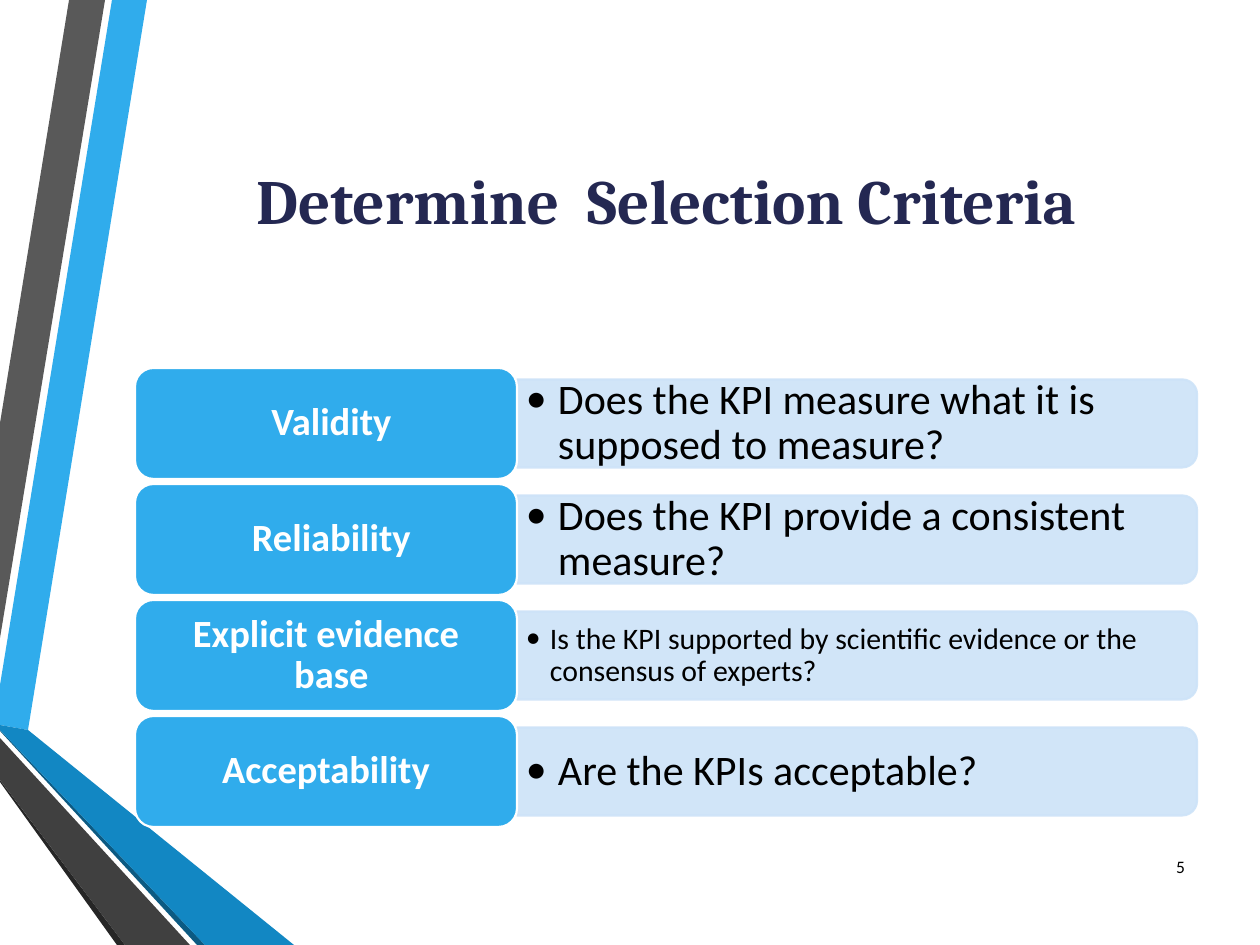
from dataclasses import dataclass

from lxml import etree
from pptx import Presentation
from pptx.dml.color import RGBColor
from pptx.enum.shapes import MSO_SHAPE
from pptx.enum.text import MSO_ANCHOR, PP_ALIGN
from pptx.oxml.ns import qn
from pptx.util import Pt

PX = 914400 / 126
ROUND_RECT = MSO_SHAPE.ROUNDED_RECTANGLE
TOP_ROUNDED = MSO_SHAPE.ROUND_2_SAME_RECTANGLE
MIDDLE = MSO_ANCHOR.MIDDLE
LEFT, CENTER, RIGHT = PP_ALIGN.LEFT, PP_ALIGN.CENTER, PP_ALIGN.RIGHT


@dataclass(frozen=True)
class Theme:
    head_font: str = "Cambria"
    body_font: str = "Calibri"
    navy: str = "242852"
    blue: str = "30ACEC"
    mid_blue: str = "1287C3"
    deep_blue: str = "0C5A82"
    pale: str = "CDE3F8"
    gray: str = "595959"
    dark: str = "404040"
    darkest: str = "262626"
    white: str = "FFFFFF"
    black: str = "000000"
    title_size: int = 36
    label_size: int = 22
    large_size: int = 24
    small_size: int = 17
    number_size: int = 10
    line_width: float = 1.25


T = Theme()

RIBBONS = [
    (T.blue, [(0, 685), (0, 725), (28, 730), (147, 0), (112, 0)]),
    (T.gray, [(105, 0), (69, 0), (0, 423), (0, 638)]),
    (T.darkest, [(0, 780), (0, 782), (117, 945), (125, 945)]),
    (T.deep_blue, [(0, 730), (0, 731), (197, 945), (205, 945)]),
    (T.mid_blue, [(0, 730), (205, 945), (294, 945), (28, 730), (0, 725)]),
    (T.dark, [(0, 780), (125, 945), (190, 945), (0, 738)]),
]
CRITERIA = [
    ("Validity ", "Does the KPI measure what it is supposed to measure?", T.large_size, 32),
    ("Reliability ", "Does the KPI provide a consistent measure?", T.large_size, 32),
    ("Explicit evidence base ",
     "Is the KPI supported by scientific evidence or the consensus of experts?", T.small_size, 24),
    ("Acceptability", "Are the KPIs acceptable?", T.large_size, 32),
]


def emu(px):
    return round(px * PX)


def box(*lengths):
    return [emu(v) for v in lengths]


def paint(sp, fill, line=None):
    sp.shadow.inherit = False
    sp.fill.solid()
    sp.fill.fore_color.rgb = RGBColor.from_string(fill)
    if line:
        sp.line.color.rgb = RGBColor.from_string(line)
        sp.line.width = Pt(T.line_width)
    else:
        sp.line.fill.background()


def set_alpha(sp, percent):
    for clr in sp._element.spPr.iter(qn("a:srgbClr")):
        etree.SubElement(clr, qn("a:alpha")).set("val", str(percent * 1000))


def write(sp, text, size, color, align, font=T.body_font, bold=False, insets=(12, 6)):
    tf = sp.text_frame
    tf.word_wrap = True
    tf.vertical_anchor = MIDDLE
    tf.margin_left = tf.margin_right = emu(insets[0])
    tf.margin_top = tf.margin_bottom = emu(insets[1])
    p = tf.paragraphs[0]
    p.alignment = align
    r = p.add_run()
    r.text = text
    r.font.name = font
    r.font.size = Pt(size)
    r.font.bold = bold
    r.font.color.rgb = RGBColor.from_string(color)
    return p


def add_bullet(p, indent):
    pPr = p._p.get_or_add_pPr()
    pPr.set("marL", str(emu(indent)))
    pPr.set("indent", str(-emu(indent)))
    etree.SubElement(pPr, qn("a:buFont")).set("typeface", T.body_font)
    etree.SubElement(pPr, qn("a:buChar")).set("char", "•")


def add_ribbons(s, x, y):
    for color, points in RIBBONS:
        fb = s.shapes.build_freeform(*points[0], scale=PX)
        fb.add_line_segments(points[1:], close=True)
        paint(fb.convert_to_shape(emu(x), emu(y)), color)


def add_title(s, x, y, w, h):
    sp = s.shapes.title
    sp.left, sp.top, sp.width, sp.height = box(x, y, w, h)
    write(sp, "Determine  Selection Criteria", T.title_size, T.navy, CENTER,
          T.head_font, True)


def add_criterion(s, x, y, w, h, label, question, size, indent):
    label_w = 382
    bar_w, bar_h = w - label_w, 88
    bar_x = x + label_w + (bar_w - bar_h) / 2
    bar_y = y + (h - bar_w) / 2
    bar = s.shapes.add_shape(TOP_ROUNDED, *box(bar_x, bar_y, bar_h, bar_w))
    bar.rotation = 90
    paint(bar, T.pale, T.pale)
    set_alpha(bar, 90)

    tb = s.shapes.add_textbox(*box(x + label_w, y + 15, bar_w - 4, h - 30))
    p = write(tb, question, size, T.black, LEFT, insets=(9, 5))
    p.line_spacing = 0.9
    add_bullet(p, indent)

    pill = s.shapes.add_shape(ROUND_RECT, *box(x, y, label_w, h))
    paint(pill, T.blue, T.white)
    p = write(pill, label, T.label_size, T.white, CENTER, bold=True, insets=(17, 11))
    p.line_spacing = 0.9
    p._p.get_or_add_pPr().set("rtl", "1")


def add_criteria(s, x, y, w, h):
    gap = 5
    row_h = (h - gap * (len(CRITERIA) - 1)) / len(CRITERIA)
    for i, row in enumerate(CRITERIA):
        add_criterion(s, x, y + i * (row_h + gap), w, row_h, *row)


def add_page_number(s, x, y, w, h):
    tb = s.shapes.add_textbox(*box(x, y, w, h))
    write(tb, "5", T.number_size, T.black, RIGHT)


def main():
    prs = Presentation()
    prs.slide_width, prs.slide_height = box(1260, 945)
    s = prs.slides.add_slide(prs.slide_layouts[5])
    add_ribbons(s, 0, 0)
    add_title(s, 135, 63, 1062, 273)
    add_criteria(s, 135, 368, 1062, 459)
    add_page_number(s, 1138, 842, 59, 50)
    prs.save("out.pptx")


if __name__ == "__main__":
    main()
